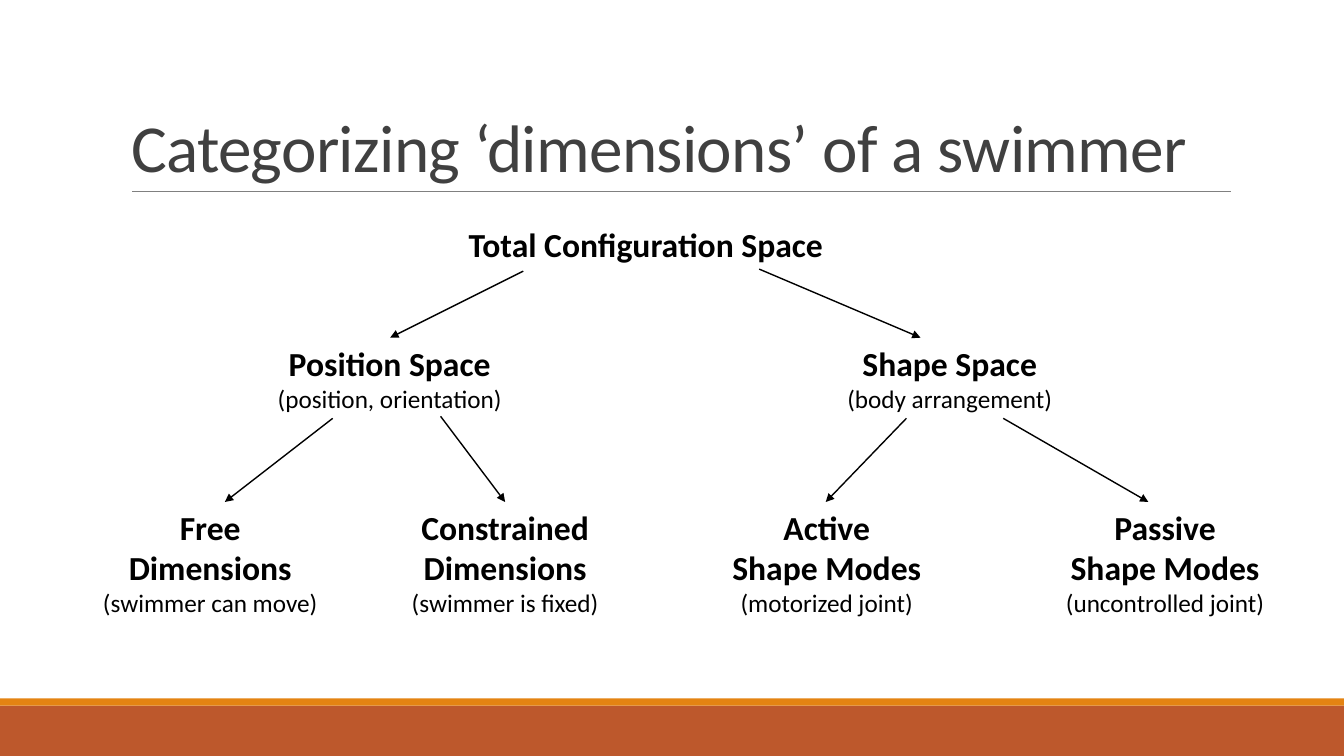
from dataclasses import dataclass
from typing import Any

from lxml import etree
from pptx import Presentation
from pptx.dml.color import RGBColor
from pptx.enum import shapes, text
from pptx.oxml import ns
from pptx.util import Inches, Pt

FACE = "Calibri"
BLACK = "000000"
LEFT, MID = text.PP_ALIGN.LEFT, text.PP_ALIGN.CENTER
ROW_TOPS = (2.17, 3.35, 4.98)
ROW_HIGHS = (0.5, 0.81, 1.21)


@dataclass
class Band:
    top: float
    high: float
    color: str


@dataclass
class Node:
    row: int
    left: float
    wide: float
    heads: tuple[str, ...]
    note: str = ""
    align: Any = MID


@dataclass
class Line:
    start: tuple[float, float]
    end: tuple[float, float]
    color: str = BLACK
    width: float = 1
    arrow: bool = True


BANDS = [Band(7, 0.5, "BD582C"), Band(6.93, 0.07, "E48312")]

NODES = [
    Node(0, 4.55, 3.75, ("Total Configuration Space",), align=LEFT),
    Node(1, 2.64, 2.45, ("Position Space",), "(position, orientation)"),
    Node(1, 8.29, 2.26, ("Shape Space",), "(body arrangement)"),
    Node(2, 0.91, 2.35, ("Free", "Dimensions"), "(swimmer can move)"),
    Node(2, 3.97, 2.08, ("Constrained", "Dimensions"), "(swimmer is fixed)"),
    Node(2, 7.15, 2.1, ("Active", "Shape Modes"), "(motorized joint)"),
    Node(2, 10.46, 2.19, ("Passive", "Shape Modes"), "(uncontrolled joint)"),
]

RULE = Line((1.31, 1.9), (12.21, 1.9), "808080", 0.5, False)
LINKS = [
    Line((5.19, 2.69), (3.87, ROW_TOPS[1])),
    Line((7.53, 2.67), (9.13, ROW_TOPS[1])),
    Line((3.3, 4.15), (2.23, ROW_TOPS[2])),
    Line((4.37, 4.13), (5.01, ROW_TOPS[2])),
    Line((8.99, 4.15), (8.19, ROW_TOPS[2])),
    Line((9.95, 4.15), (11.39, ROW_TOPS[2])),
]


def paint(color: Any, code: str) -> None:
    color.rgb = RGBColor.from_string(code)


def apply(item: Any, form: dict[str, Any]) -> None:
    for name, value in form.items():
        setattr(item, name, value)


def write(para: Any, words: str, size: float, bold: bool, code: str) -> Any:
    run = para.add_run()
    run.text = words
    apply(run.font, {"name": FACE, "size": Pt(size), "bold": bold})
    paint(run.font.color, code)
    return run


def draw_band(slide: Any, band: Band) -> None:
    shape = slide.shapes.add_shape(
        shapes.MSO_SHAPE.RECTANGLE,
        0, Inches(band.top), Inches(13.33), Inches(band.high))
    shape.shadow.inherit = False
    shape.fill.solid()
    paint(shape.fill.fore_color, band.color)
    shape.line.fill.background()


def draw_line(slide: Any, line: Line) -> None:
    ends = [Inches(n) for n in (*line.start, *line.end)]
    link = slide.shapes.add_connector(shapes.MSO_CONNECTOR.STRAIGHT, *ends)
    link.line.width = Pt(line.width)
    paint(link.line.color, line.color)
    if line.arrow:
        tip = etree.SubElement(link.line._get_or_add_ln(), ns.qn("a:tailEnd"))
        tip.set("type", "triangle")
    etree.SubElement(link._element.spPr, ns.qn("a:effectLst"))


def draw_title(slide: Any, words: str) -> None:
    title = slide.shapes.title
    apply(title, {"left": Inches(1.2), "top": Inches(0.31),
                  "width": Inches(11), "height": Inches(1.59)})
    apply(title.text_frame, {"vertical_anchor": text.MSO_ANCHOR.BOTTOM,
                             "auto_size": text.MSO_AUTO_SIZE.NONE,
                             "word_wrap": True})
    para = title.text_frame.paragraphs[0]
    apply(para, {"alignment": LEFT, "line_spacing": 0.85})
    run = write(para, words, 48, False, "404040")
    run.font._element.set("spc", "-50")


def draw_node(slide: Any, node: Node) -> None:
    box = slide.shapes.add_textbox(
        Inches(node.left), Inches(ROW_TOPS[node.row]),
        Inches(node.wide), Inches(ROW_HIGHS[node.row]))
    frame = box.text_frame
    apply(frame, {"word_wrap": False,
                  "auto_size": text.MSO_AUTO_SIZE.SHAPE_TO_FIT_TEXT})
    rows = [(head, 24, True) for head in node.heads]
    if node.note:
        rows.append((node.note, 18, False))
    for i, (words, size, bold) in enumerate(rows):
        para = frame.add_paragraph() if i else frame.paragraphs[0]
        para.alignment = node.align
        write(para, words, size, bold, BLACK)


def main() -> None:
    deck = Presentation()
    apply(deck, {"slide_width": Inches(13.33), "slide_height": Inches(7.5)})
    slide = deck.slides.add_slide(deck.slide_layouts[5])

    # Footer bands, title and its rule
    for band in BANDS:
        draw_band(slide, band)
    draw_line(slide, RULE)
    draw_title(slide, "Categorizing ‘dimensions’ of a swimmer")

    # Tree of spaces
    for node in NODES:
        draw_node(slide, node)
    for link in LINKS:
        draw_line(slide, link)

    deck.save("out.pptx")


if __name__ == "__main__":
    main()
